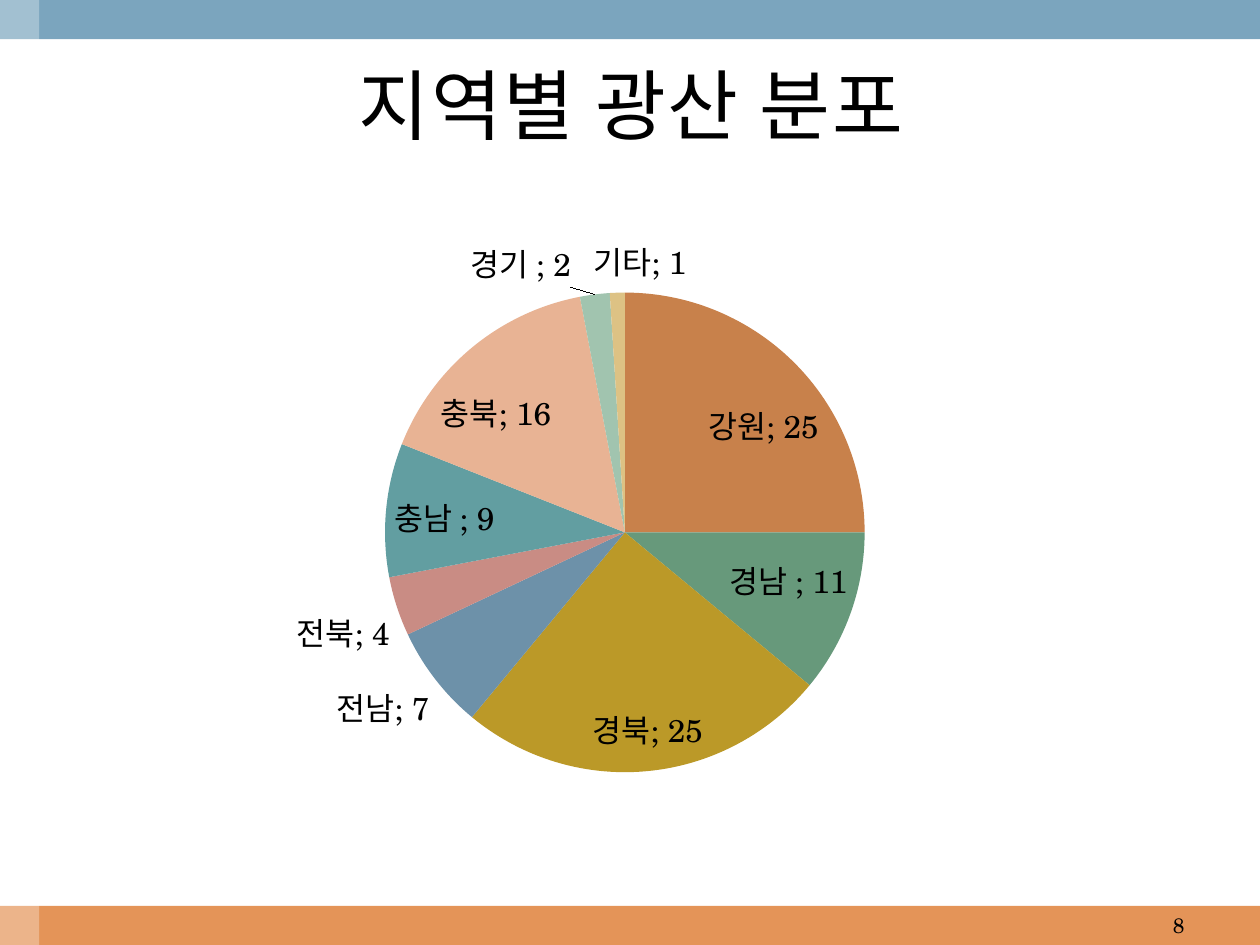
from lxml import etree
from pptx import Presentation
from pptx.chart.data import CategoryChartData
from pptx.dml.color import RGBColor
from pptx.enum import chart as ch, shapes, text
from pptx.oxml import parse_xml
from pptx.oxml.ns import nsdecls, qn
from pptx.util import Cm, Pt

FONT = "TeX Gyre Schola"
BLACK = RGBColor(0x00, 0x00, 0x00)
WHITE = RGBColor(0xFF, 0xFF, 0xFF)
ORANGE = RGBColor(0xE4, 0x94, 0x58)
BLUE = RGBColor(0x7B, 0xA5, 0xBE)
REGIONS = [
    ("강원", 25, RGBColor(0xC8, 0x81, 0x4B)),
    ("경남 ", 11, RGBColor(0x67, 0x99, 0x7B)),
    ("경북", 25, RGBColor(0xBB, 0x99, 0x28)),
    ("전남", 7, RGBColor(0x6D, 0x91, 0xA9)),
    ("전북", 4, RGBColor(0xC9, 0x8C, 0x84)),
    ("충남 ", 9, RGBColor(0x62, 0x9E, 0xA1)),
    ("충북", 16, RGBColor(0xE8, 0xB3, 0x94)),
    ("경기 ", 2, RGBColor(0xA1, 0xC4, 0xAF)),
    ("기타", 1, RGBColor(0xDD, 0xC2, 0x84)),
]

prs = Presentation()
prs.slide_width, prs.slide_height = Cm(25.4), Cm(19.05)
s = prs.slides.add_slide(prs.slide_layouts[5])
BAND = Cm(0.79)


def format_text(tf, size, align):
    tf.vertical_anchor = text.MSO_ANCHOR.MIDDLE
    tf.word_wrap = True
    p = tf.paragraphs[0]
    p.alignment = align
    p.font.name, p.font.size = FONT, Pt(size)
    p.font.color.rgb = BLACK
    return p


# Bottom and top bands, then the translucent strip on the left
for top, width, height, color in [
    (prs.slide_height - BAND, prs.slide_width, BAND, ORANGE),
    (0, prs.slide_width, BAND, BLUE),
    (0, BAND, prs.slide_height, WHITE),
]:
    sp = s.shapes.add_shape(shapes.MSO_SHAPE.RECTANGLE, 0, top, width, height)
    sp.shadow.inherit = False
    sp.fill.solid()
    sp.fill.fore_color.rgb = color
    sp.line.fill.background()
white = next(sp._element.spPr.iter(qn("a:srgbClr")))
etree.SubElement(white, qn("a:alpha")).set("val", "30000")

# Title
title = s.shapes.title
title.left, title.top, title.width, title.height = Cm(0.84), Cm(0.79), Cm(23.77), Cm(2.62)
title.text_frame.text = "지역별 광산 분포"
p = format_text(title.text_frame, 44, text.PP_ALIGN.CENTER)
p.runs[0].font._element.set("spc", "100")

# Pie chart
data = CategoryChartData()
data.categories = [name for name, _, _ in REGIONS]
data.add_series("Series 1", [value for _, value, _ in REGIONS])
chart = s.shapes.add_chart(
    ch.XL_CHART_TYPE.PIE, Cm(1.27), Cm(4.45), Cm(22.86), Cm(12.57), data
).chart
chart.has_legend = chart.has_title = False
chart.font.name, chart.font.size = FONT, Pt(10)
chart.font.color.rgb = BLACK
plot = chart.plots[0]
plot.vary_by_categories = True
for i, (_, _, color) in enumerate(REGIONS):
    fill = plot.series[0].points[i].format.fill
    fill.solid()
    fill.fore_color.rgb = color

# Labels: category and value
plot.has_data_labels = True
labels = plot.data_labels
labels.show_category_name = labels.show_value = True
labels.show_percentage = False
labels.position = ch.XL_LABEL_POSITION.BEST_FIT
labels.font.name, labels.font.size = FONT, Pt(18)
labels.font.color.rgb = BLACK
dl = labels._element
for tag in ("c:separator", "c:showLeaderLines"):
    for old in dl.findall(qn(tag)):
        dl.remove(old)
dl.find(qn("c:showBubbleSize")).addnext(
    parse_xml(f'<c:separator {nsdecls("c")}>; </c:separator>'))
etree.SubElement(dl, qn("c:showLeaderLines")).set("val", "1")

# Place the pie inside the chart frame
area = chart._chartSpace.chart.plotArea
for old in area.findall(qn("c:layout")):
    area.remove(old)
area.insert(0, parse_xml(
    f'<c:layout {nsdecls("c")}><c:manualLayout><c:layoutTarget val="inner"/>'
    '<c:xMode val="edge"/><c:yMode val="edge"/><c:x val="0.284"/><c:y val="0.115"/>'
    '<c:w val="0.423"/><c:h val="0.77"/></c:manualLayout></c:layout>'))

# Slide number
sp = s.shapes.add_textbox(Cm(18.21), Cm(18.26), Cm(5.92), BAND)
sp.text_frame.text = "8"
format_text(sp.text_frame, 12, text.PP_ALIGN.RIGHT)

prs.save("out.pptx")
